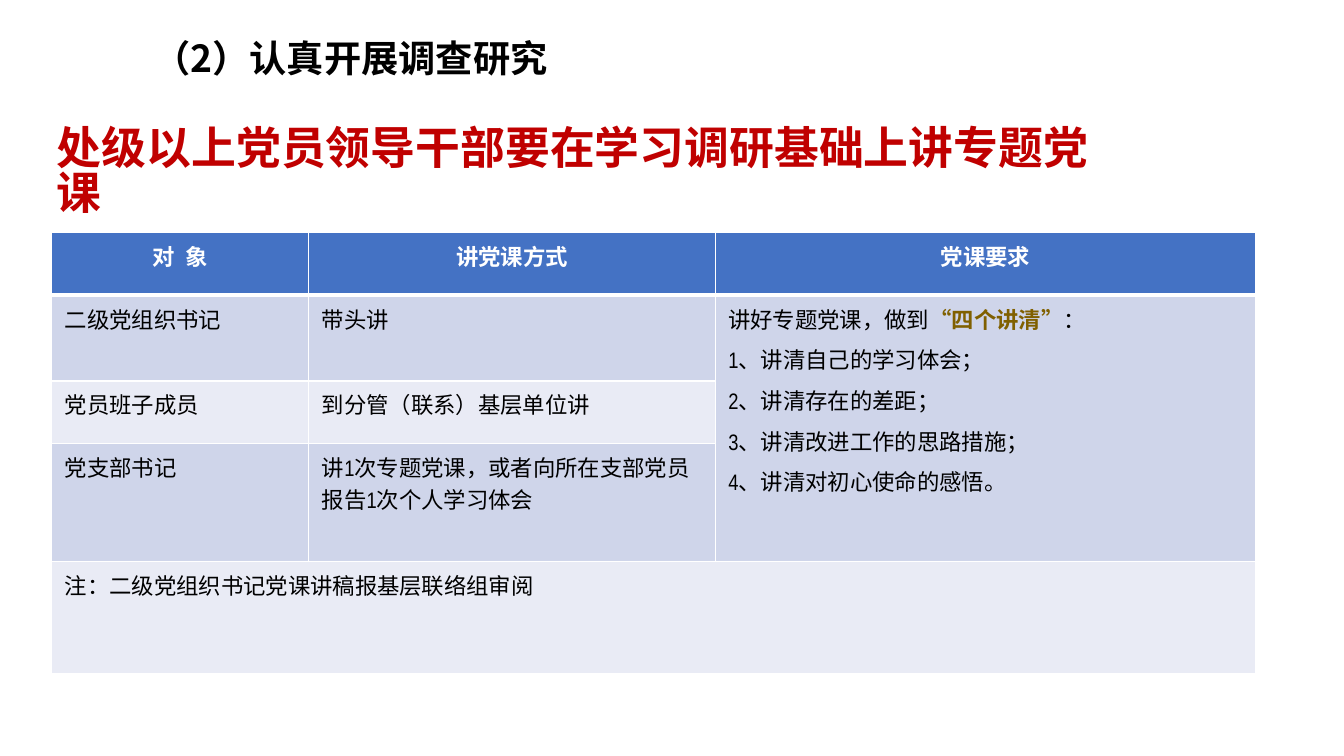
from lxml.etree import SubElement
from pptx import Presentation
from pptx.dml.color import RGBColor
from pptx.enum.text import PP_ALIGN
from pptx.oxml.ns import qn
from pptx.util import Inches, Pt

NARROW, SANS = "Arial Narrow", "Noto Sans CJK SC"


def color(code):
    return RGBColor.from_string(code)


def write(frame, *paras, size=16, font=NARROW, ink="000000", bold=False,
          align=PP_ALIGN.LEFT, gap=0, line=None):
    frame.word_wrap = True
    for i, para in enumerate(paras):
        p = frame.paragraphs[0] if i == 0 else frame.add_paragraph()
        p.alignment = align
        p.line_spacing = line
        if i:
            p.space_before = Pt(gap)
        for part in [para] if isinstance(para, str) else para:
            text, tint, heavy = (part, ink, bold) if isinstance(part, str) else part
            run = p.add_run()
            run.text = text
            run.font.size = Pt(size)
            run.font.name = font
            run.font.bold = heavy
            run.font.color.rgb = color(tint)
            SubElement(run.font._element, qn("a:ea"), typeface=SANS)


deck = Presentation()
deck.slide_width, deck.slide_height = Inches(13.33), Inches(7.5)
wide, high = deck.slide_width, deck.slide_height
slide = deck.slides.add_slide(deck.slide_layouts[6])

title = slide.shapes.add_textbox(
    int(wide * 0.1065), int(high * 0.04), int(wide * 0.384), int(high * 0.073))
write(title.text_frame, "（2）认真开展调查研究", size=26.6, font=SANS, bold=True)

head = slide.shapes.add_textbox(
    int(wide * 0.035), int(high * 0.163), int(wide * 0.815), int(high * 0.085))
write(head.text_frame, "处级以上党员领导干部要在学习调研基础上讲专题党课",
      size=32, ink="C00000", bold=True, line=0.84)

cols = [2.55, 4.03, 5.36]
rows = [0.62, 0.85, 0.62, 1.17, 1.11]
fills = ["4472C4", "CFD5EA", "E9EBF5", "CFD5EA", "E9EBF5"]
texts = [
    ["对  象", "讲党课方式", "党课要求"],
    ["二级党组织书记", "带头讲"],
    ["党员班子成员", "到分管（联系）基层单位讲"],
    ["党支部书记", "讲1次专题党课，或者向所在支部党员报告1次个人学习体会"],
    ["注：二级党组织书记党课讲稿报基层联络组审阅"],
]
needs = [
    ["讲好专题党课，做到", ("“四个讲清”", "806000", True), "："],
    "1、讲清自己的学习体会；",
    "2、讲清存在的差距；",
    "3、讲清改进工作的思路措施；",
    "4、讲清对初心使命的感悟。",
]

table = slide.shapes.add_table(
    len(rows), len(cols), int(wide * 0.0385), int(high * 0.308),
    Inches(sum(cols)), Inches(sum(rows))).table
for col, size in zip(table.columns, cols):
    col.width = Inches(size)
for row, size in zip(table.rows, rows):
    row.height = Inches(size)
table.cell(1, 2).merge(table.cell(3, 2))
table.cell(4, 0).merge(table.cell(4, 2))

for r, fill in enumerate(fills):
    for c in range(len(cols)):
        cell = table.cell(r, c)
        cell.margin_left = cell.margin_right = Inches(0.13)
        cell.margin_top = cell.margin_bottom = Inches(0.07)
        props = cell._tc.get_or_add_tcPr()
        for side in "LRTB":
            thick = (r, side) in [(0, "B"), (1, "T")]
            edge = SubElement(props, qn(f"a:ln{side}"), w=str(Pt(3 if thick else 1)))
            SubElement(SubElement(edge, qn("a:solidFill")), qn("a:srgbClr"), val="FFFFFF")
        cell.fill.solid()
        cell.fill.fore_color.rgb = color(fill)
        if c < len(texts[r]):
            style = {} if r else dict(ink="FFFFFF", bold=True, align=PP_ALIGN.CENTER)
            write(cell.text_frame, texts[r][c], **style)
write(table.cell(1, 2).text_frame, *needs, gap=6)

deck.save("out.pptx")
